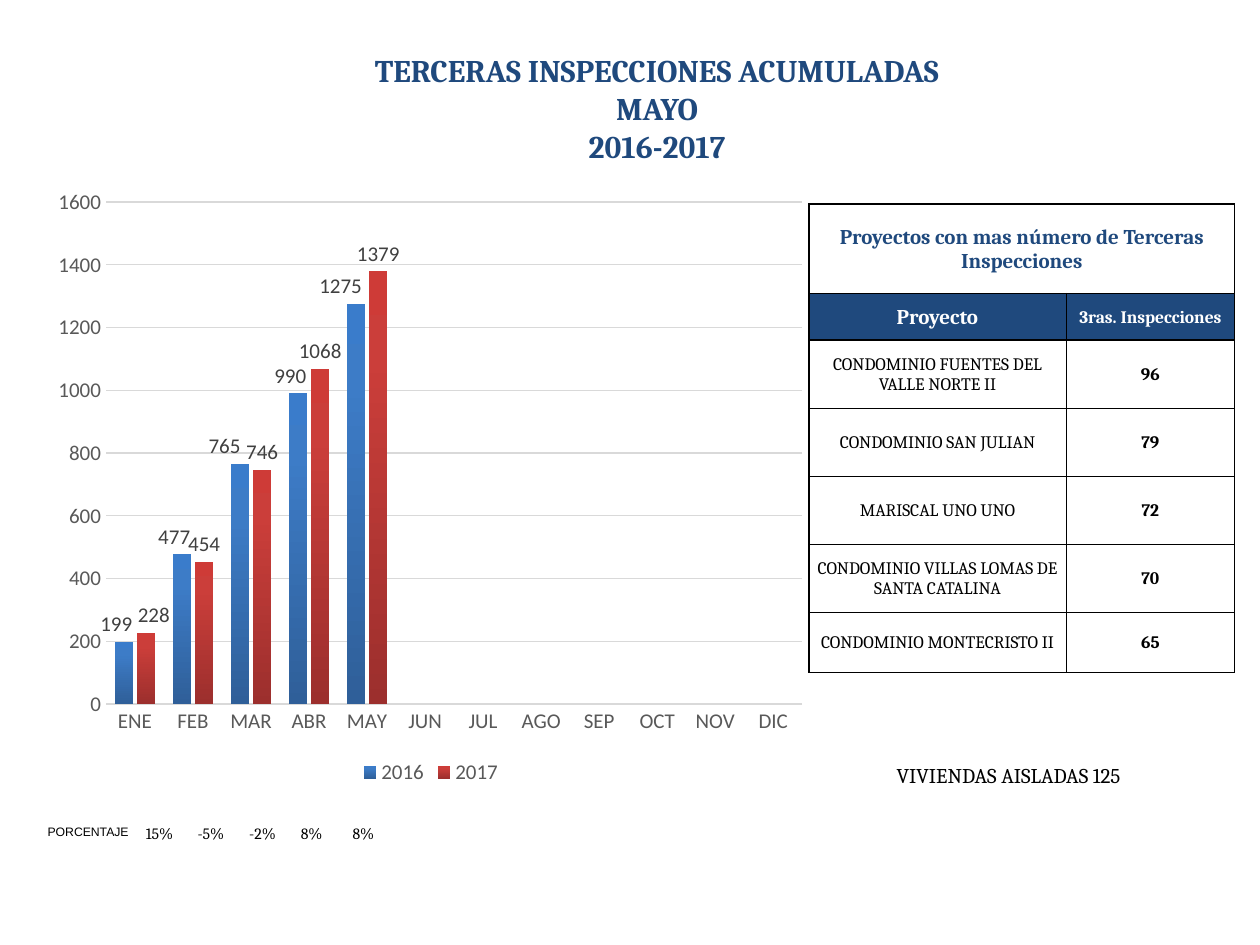
from lxml import etree
from pptx import Presentation
from pptx.chart.data import CategoryChartData
from pptx.dml.color import RGBColor
from pptx.enum.chart import XL_CHART_TYPE, XL_LABEL_POSITION, XL_LEGEND_POSITION, XL_TICK_MARK
from pptx.enum.text import MSO_ANCHOR, PP_ALIGN
from pptx.oxml import parse_xml
from pptx.oxml.ns import nsdecls, qn
from pptx.util import Inches, Pt

CLUSTERED = XL_CHART_TYPE.COLUMN_CLUSTERED
OUTSIDE_END = XL_LABEL_POSITION.OUTSIDE_END
BOTTOM = XL_LEGEND_POSITION.BOTTOM
NO_TICK = XL_TICK_MARK.NONE
MIDDLE = MSO_ANCHOR.MIDDLE
LEFT, CENTER = PP_ALIGN.LEFT, PP_ALIGN.CENTER

NAVY, BLACK, WHITE = "1F497D", "000000", "FFFFFF"
GRAY, LABEL_GRAY, GRID = "595959", "404040", "D9D9D9"

MONTHS = ["ENE", "FEB", "MAR", "ABR", "MAY", "JUN",
          "JUL", "AGO", "SEP", "OCT", "NOV", "DIC"]
# name, values, gradient stops (bottom to top), sideways label shifts
SERIES = [
    ("2016", [199, 477, 765, 990, 1275],
     [(0, "2F5F99"), (80, "3D7CC7"), (100, "3A7CCB")], [-0.01, -0.01, -0.02, -0.01, -0.02]),
    ("2017", [228, 454, 746, 1068, 1379],
     [(0, "9C2F2D"), (80, "CB3E3A"), (100, "CE3B37")], [0.01, 0, 0, 0, 0]),
]
PERCENTAGES = ["15%", "-5%", "-2%", "8%", "8%"]
PROJECTS = [
    ("CONDOMINIO FUENTES DEL VALLE NORTE II", "96"),
    ("CONDOMINIO SAN JULIAN", "79"),
    ("MARISCAL UNO UNO", "72"),
    ("CONDOMINIO VILLAS LOMAS DE SANTA CATALINA", "70"),
    ("CONDOMINIO MONTECRISTO II", "65"),
]


def rgb(value):
    return RGBColor.from_string(value)


def set_font(font, size, color, name="Cambria", bold=False):
    for key, value in {"size": Pt(size), "name": name, "bold": bold}.items():
        setattr(font, key, value)
    font.color.rgb = rgb(color)


def add_text(s, box, lines, align=LEFT, tabs=(), **style):
    tf = s.shapes.add_textbox(*map(Inches, box)).text_frame
    tf.word_wrap = True
    for i, line in enumerate(lines):
        p = tf.paragraphs[0] if i == 0 else tf.add_paragraph()
        p.alignment = align
        if tabs:
            stops = etree.SubElement(p._p.get_or_add_pPr(), qn("a:tabLst"))
            for stop in tabs:
                etree.SubElement(stops, qn("a:tab"), pos=str(Inches(stop)), algn="l")
        r = p.add_run()
        r.text = line
        set_font(r.font, **style)


def set_gradient(series, stops):
    """Fill the columns with a gradient that runs upwards."""
    series.format.fill.gradient()
    old = series._element.find(qn("c:spPr")).find(qn("a:gradFill"))
    marks = "".join(f'<a:gs pos="{pos * 1000}"><a:srgbClr val="{color}"/></a:gs>'
                    for pos, color in stops)
    old.getparent().replace(old, parse_xml(
        f'<a:gradFill {nsdecls("a")} rotWithShape="1"><a:gsLst>{marks}</a:gsLst>'
        '<a:lin ang="16200000" scaled="0"/></a:gradFill>'))


def manual_layout(**values):
    parts = "".join(f'<c:{key} val="{value}"/>' for key, value in values.items())
    return parse_xml(f'<c:layout {nsdecls("c")}><c:manualLayout>{parts}'
                     '</c:manualLayout></c:layout>')


def set_labels(series, shifts):
    labels = series.data_labels
    labels.show_value = True
    labels.position = OUTSIDE_END
    set_font(labels.font, 12, LABEL_GRAY, "Calibri")
    for i, shift in enumerate(shifts):
        if shift:
            label = series.points[i].data_label
            set_font(label.font, 12, LABEL_GRAY, "Calibri")
            label.position = OUTSIDE_END
            idx = series._element.xpath(f"c:dLbls/c:dLbl/c:idx[@val='{i}']")[0]
            idx.addnext(manual_layout(x=shift, y=0))


def add_inspections_chart(s, box):
    data = CategoryChartData()
    data.categories = MONTHS
    for name, values, _, _ in SERIES:
        data.add_series(name, values + [None] * (len(MONTHS) - len(values)))
    chart = s.shapes.add_chart(CLUSTERED, *map(Inches, box), data).chart
    set_font(chart.font, 10, BLACK, "Calibri")
    chart.has_title = False
    chart.has_legend = True
    chart.legend.position = BOTTOM
    chart.legend.include_in_layout = False
    set_font(chart.legend.font, 12, GRAY, "Calibri")

    plot = chart.plots[0]
    for key, value in {"gap_width": 100, "overlap": -24, "vary_by_categories": False}.items():
        setattr(plot, key, value)
    for series, (_, _, stops, shifts) in zip(plot.series, SERIES):
        set_gradient(series, stops)
        set_labels(series, shifts)

    months, counts = chart.category_axis, chart.value_axis
    for axis in (months, counts):
        axis.major_tick_mark = axis.minor_tick_mark = NO_TICK
        set_font(axis.tick_labels.font, 12, GRAY, "Calibri")
    months.format.line.color.rgb = rgb(GRID)
    months.format.line.width = Pt(1)
    counts.minimum_scale, counts.maximum_scale, counts.major_unit = 0, 1600, 200
    counts.format.line.fill.background()
    counts.major_gridlines.format.line.color.rgb = rgb(GRID)
    counts.major_gridlines.format.line.width = Pt(0.75)

    area = chart._chartSpace.chart.plotArea
    for old in area.findall(qn("c:layout")):
        area.remove(old)
    area.insert(0, manual_layout(layoutTarget="inner", xMode="edge", yMode="edge",
                                 x=0.08, y=0.04, w=0.9, h=0.82))


def add_plain_table(s, box, widths, heights):
    table = s.shapes.add_table(len(heights), len(widths), *map(Inches, box)).table
    table.first_row = table.horz_banding = False
    for col, width in zip(table.columns, widths):
        col.width = Inches(width)
    for row, height in zip(table.rows, heights):
        row.height = Inches(height)
    return table


def fill_cell(cell, text, fill=None, **style):
    cell.vertical_anchor = MIDDLE
    if fill:
        cell.fill.solid()
        cell.fill.fore_color.rgb = rgb(fill)
    else:
        cell.fill.background()
    p = cell.text_frame.paragraphs[0]
    p.alignment = CENTER
    r = p.add_run()
    r.text = text
    set_font(r.font, **style)


def set_borders(cell, widths):
    tcPr = cell._tc.get_or_add_tcPr()
    for i, (side, width) in enumerate(widths.items()):
        tcPr.insert(i, parse_xml(
            f'<a:ln{side} {nsdecls("a")} w="{Pt(width)}"><a:solidFill>'
            f'<a:srgbClr val="{BLACK}"/></a:solidFill></a:ln{side}>'))


def add_projects_table(s, box):
    heights = [0.71, 0.37] + [0.54] * 4 + [0.48]
    table = add_plain_table(s, box, [2.04, 1.34], heights)
    last = len(heights) - 1
    for r in range(len(heights)):
        for c in range(2):
            cell = table.cell(r, c)
            cell.margin_left = cell.margin_right = cell.margin_top = Inches(0.01)
            cell.margin_bottom = 0
            heavy = {"L": c == 0, "R": c == 1 or r == 0, "T": r <= 2, "B": r <= 1 or r == last}
            set_borders(cell, {side: 1 if on else 0.5 for side, on in heavy.items()})
    table.cell(0, 0).merge(table.cell(0, 1))
    fill_cell(table.cell(0, 0), "Proyectos con mas número de Terceras Inspecciones",
              size=12, color=NAVY, bold=True)
    for c, (text, size) in enumerate([("Proyecto", 12), ("3ras. Inspecciones", 10)]):
        fill_cell(table.cell(1, c), text, NAVY, size=size, color=WHITE, bold=True)
    for r, project in enumerate(PROJECTS, start=2):
        for c, text in enumerate(project):
            fill_cell(table.cell(r, c), text, size=10, color=BLACK, bold=c == 1)


def add_isolated_homes(s, box):
    table = add_plain_table(s, box, [box[2]], [box[3]])
    fill_cell(table.cell(0, 0), "VIVIENDAS AISLADAS 125", size=12, color=BLACK)


def main():
    prs = Presentation()
    prs.slide_width, prs.slide_height = Inches(10), Inches(7.5)
    s = prs.slides.add_slide(prs.slide_layouts[6])
    add_text(s, (2.01, 0.36, 6.41, 1.04),
             ["TERCERAS INSPECCIONES ACUMULADAS", "MAYO", "2016-2017"],
             CENTER, size=18, color=NAVY, bold=True)
    add_isolated_homes(s, (6.97, 5.93, 2.07, 0.47))
    add_text(s, (0.28, 6.49, 0.87, 0.52), ["PORCENTAJE"], size=7, color=BLACK, name="Arial")
    add_text(s, (1.06, 6.49, 2.2, 0.25), ["\t".join(PERCENTAGES)],
             tabs=[0.41 * i for i in range(1, 5)], size=9, color=BLACK)
    add_inspections_chart(s, (0.35, 1.41, 6.14, 4.86))
    add_projects_table(s, (6.42, 1.62, 3.38, 3.7))
    prs.save("out.pptx")


if __name__ == "__main__":
    main()
